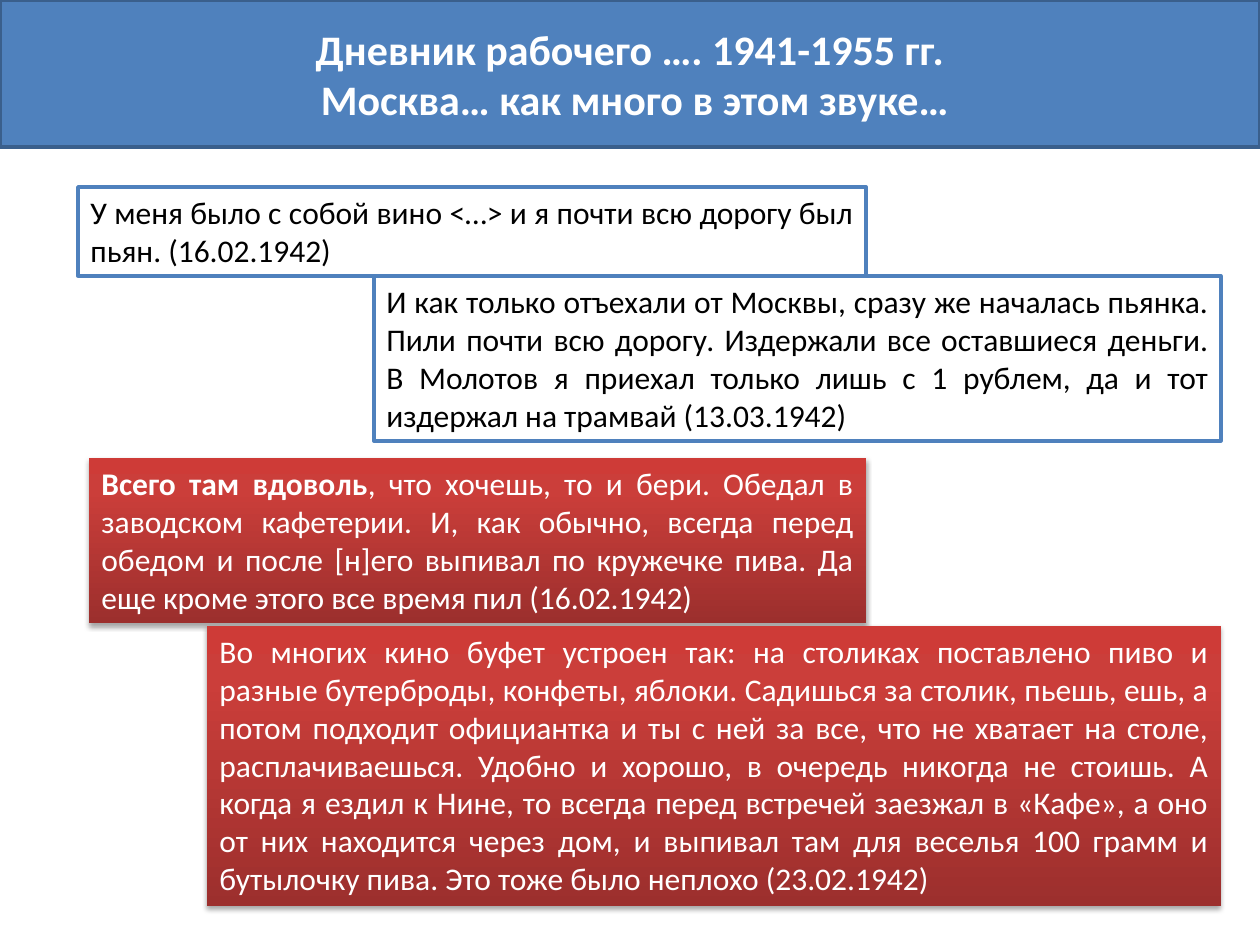
from lxml import etree
from pptx import Presentation
from pptx.dml.color import RGBColor
from pptx.enum.text import MSO_ANCHOR, MSO_AUTO_SIZE, PP_ALIGN
from pptx.oxml import parse_xml
from pptx.oxml.ns import nsdecls
from pptx.util import Pt

CENTER, JUSTIFY = PP_ALIGN.CENTER, PP_ALIGN.JUSTIFY
MIDDLE, TOP = MSO_ANCHOR.MIDDLE, MSO_ANCHOR.TOP
NO_FIT, GROW = MSO_AUTO_SIZE.NONE, MSO_AUTO_SIZE.SHAPE_TO_FIT_TEXT
EMU = 914400 / 126  # one px
WIDE, HIGH = 1260, 945
BLUE, EDGE, WHITE, BLACK = "4F81BD", "3A5F8C", "FFFFFF", "000000"
REDS = [(0, "9C2F2D"), (80, "CB3E3A"), (100, "CE3B37")]  # bottom to top

TITLE = ["Дневник рабочего …. 1941-1955 гг.",
         " Москва… как много в этом звуке…"]

# Quotes: box in px, bold lead, text
PLAIN = [
    ((78, 187, 788, 89), "",
     "У меня было с собой вино <…> и я почти всю дорогу был пьян. (16.02.1942)"),
    ((374, 276, 847, 165), "",
     "И как только отъехали от Москвы, сразу же началась пьянка. Пили почти "
     "всю дорогу. Издержали все оставшиеся деньги. В Молотов я приехал только "
     "лишь с 1 рублем, да и тот издержал на трамвай (13.03.1942)"),
]
RED = [
    ((89, 458, 777, 165), "Всего там вдоволь",
     ", что хочешь, то и бери. Обедал в заводском кафетерии. И, как обычно, "
     "всегда перед обедом и после [н]его выпивал по кружечке пива. Да еще "
     "кроме этого все время пил (16.02.1942)"),
    ((207, 626, 1014, 280), "",
     "Во многих кино буфет устроен так: на столиках поставлено пиво и разные "
     "бутерброды, конфеты, яблоки. Садишься за столик, пьешь, ешь, а потом "
     "подходит официантка и ты с ней за все, что не хватает на столе, "
     "расплачиваешься. Удобно и хорошо, в очередь никогда не стоишь. А когда "
     "я ездил к Нине, то всегда перед встречей заезжал в «Кафе», а оно от них "
     "находится через дом, и выпивал там для веселья 100 грамм и бутылочку "
     "пива. Это тоже было неплохо (23.02.1942)"),
]


def px(n):
    return round(n * EMU)


def rgb(code):
    return RGBColor.from_string(code)


def write(para, text, size=18, color=BLACK, bold=False, align=JUSTIFY):
    para.alignment = align
    run = para.add_run()
    run.text = text
    font = run.font
    font.name, font.size, font.bold = "Calibri", Pt(size), bold
    font.color.rgb = rgb(color)


def frame(shape, anchor, fit):
    body = shape.text_frame
    body.word_wrap = True
    body.vertical_anchor = anchor
    body.auto_size = fit
    return body


def paint(shape, fill, line):
    shape.fill.solid()
    shape.fill.fore_color.rgb = rgb(fill)
    shape.line.color.rgb = rgb(line)
    shape.line.width = Pt(2)


def glow(shape):
    """Red upward gradient with a soft shadow below."""
    stops = "".join(f'<a:gs pos="{pos * 1000}"><a:srgbClr val="{code}"/></a:gs>'
                    for pos, code in REDS)
    fill = shape.fill
    fill.background()
    props = shape.element.spPr
    blank = props.find("{*}noFill")
    props.replace(blank, parse_xml(
        f'<a:gradFill {nsdecls("a")} rotWithShape="1"><a:gsLst>{stops}</a:gsLst>'
        '<a:lin ang="16200000" scaled="0"/></a:gradFill>'))
    shape.line.fill.background()
    effect = etree.SubElement(props, props.tag.replace("spPr", "effectLst"))
    props.replace(effect, parse_xml(
        f'<a:effectLst {nsdecls("a")}><a:outerShdw blurRad="{Pt(3.1)}" '
        f'dist="{Pt(1.8)}" dir="5400000" rotWithShape="0"><a:srgbClr val="{BLACK}">'
        '<a:alpha val="35000"/></a:srgbClr></a:outerShdw></a:effectLst>'))


def banner(slide, box):
    title = slide.shapes.title
    title.left, title.top, title.width, title.height = map(px, box)
    paint(title, BLUE, EDGE)
    body = frame(title, MIDDLE, NO_FIT)
    for i, text in enumerate(TITLE):
        para = body.add_paragraph() if i else body.paragraphs[0]
        write(para, text, size=24, color=WHITE, bold=True, align=CENTER)


def quote(slide, box, lead, text, red=False):
    shape = slide.shapes.add_textbox(*map(px, box))
    if red:
        glow(shape)
    else:
        paint(shape, WHITE, BLUE)
    color = WHITE if red else BLACK
    para = frame(shape, TOP, GROW).paragraphs[0]
    if lead:
        write(para, lead, color=color, bold=True)
    write(para, text, color=color)


def main():
    deck = Presentation()
    deck.slide_width, deck.slide_height = px(WIDE), px(HIGH)
    slide = deck.slides.add_slide(deck.slide_layouts[5])
    banner(slide, (0, 0, WIDE, 147))
    for item in PLAIN:
        quote(slide, *item)
    for item in RED:
        quote(slide, *item, red=True)
    deck.save("out.pptx")


if __name__ == "__main__":
    main()
